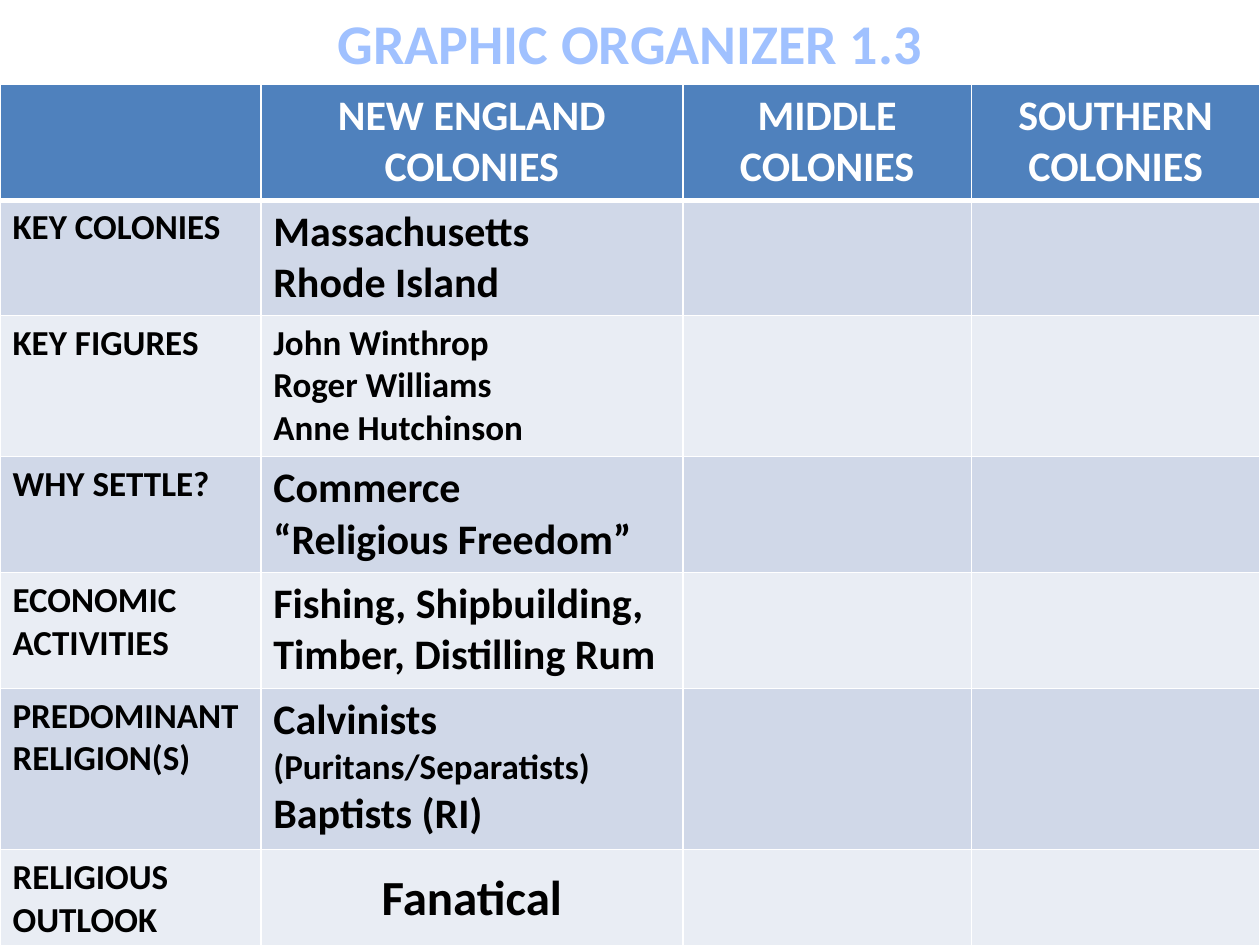
from lxml import etree
from pptx import Presentation
from pptx.dml.color import RGBColor
from pptx.enum.text import MSO_ANCHOR, PP_ALIGN
from pptx.oxml.ns import qn
from pptx.util import Inches, Pt

CENTER, LEFT = PP_ALIGN.CENTER, PP_ALIGN.LEFT
MIDDLE, TOP = MSO_ANCHOR.MIDDLE, MSO_ANCHOR.TOP
TITLE_ONLY = 5
FONT = "Calibri"
WHITE, BLACK, HEADER = "FFFFFF", "000000", "4F81BD"
BANDS = ["D0D8E8", "E9EDF4"]
TITLE_STOPS = [(0, "BFD3F9"), (9, "A0C1FF"), (50, "003D85"),
               (79, "A0C1FF"), (100, "BFD3F9")]

COL_WIDTHS = [2.07, 3.35, 2.29, 2.29]
ROW_HEIGHTS = [0.92, 0.9, 1.11, 0.92, 0.92, 1.28, 0.78]
HEADINGS = ["NEW ENGLAND COLONIES", "MIDDLE COLONIES", "SOUTHERN COLONIES"]
# Row label, then New England paragraphs as (text, size)
TOPICS = [
    ("KEY COLONIES", [("Massachusetts\nRhode Island", 24)]),
    ("KEY FIGURES", [("John Winthrop\nRoger Williams\nAnne Hutchinson", 20)]),
    ("WHY SETTLE?", [("Commerce", 24), ("“Religious Freedom”", 24)]),
    ("ECONOMIC ACTIVITIES",
     [("Fishing, Shipbuilding, Timber, Distilling Rum", 24)]),
    ("PREDOMINANT RELIGION(S)",
     [("Calvinists", 24), ("(Puritans/Separatists)", 20),
      ("Baptists (RI)", 24)]),
    ("RELIGIOUS OUTLOOK", [("Fanatical", 28)]),
]


def rgb(value):
    return RGBColor.from_string(value)


def add_solid(parent, color):
    fill = etree.SubElement(parent, qn("a:solidFill"))
    etree.SubElement(fill, qn("a:srgbClr"), val=color)


def format_font(font, size):
    for name, value in {"name": FONT, "size": Pt(size), "bold": True}.items():
        setattr(font, name, value)


def write(tf, paragraphs, color, align=LEFT):
    for i, (text, size) in enumerate(paragraphs):
        p = tf.paragraphs[0] if i == 0 else tf.add_paragraph()
        p.alignment = align
        for j, line in enumerate(text.split("\n")):
            if j:
                p.add_line_break()
            r = p.add_run()
            r.text = line
            format_font(r.font, size)
            r.font.color.rgb = rgb(color)


def set_borders(cell, bottom):
    tc_pr = cell._tc.get_or_add_tcPr()
    for side, width in zip("LRTB", [1, 1, 1, bottom]):
        ln = etree.SubElement(tc_pr, qn(f"a:ln{side}"), w=str(Pt(width)))
        add_solid(ln, WHITE)


def add_title(s):
    sp = s.shapes.title
    box = {"left": 0, "top": 0, "width": Inches(10), "height": Inches(0.67)}
    for name, value in box.items():
        setattr(sp, name, value)
    tf = sp.text_frame
    tf.vertical_anchor = MIDDLE
    p = tf.paragraphs[0]
    p.alignment = CENTER
    r = p.add_run()
    r.text = "GRAPHIC ORGANIZER 1.3"
    format_font(r.font, 32)

    # Outline and vertical gradient come first in the run properties
    r_pr = r.font._element
    ln = etree.Element(qn("a:ln"), w=str(Pt(0.83)))
    add_solid(ln, "467AB8")
    grad = etree.Element(qn("a:gradFill"))
    stops = etree.SubElement(grad, qn("a:gsLst"))
    for position, color in TITLE_STOPS:
        gs = etree.SubElement(stops, qn("a:gs"), pos=str(position * 1000))
        etree.SubElement(gs, qn("a:srgbClr"), val=color)
    etree.SubElement(grad, qn("a:lin"), ang=str(90 * 60000))
    r_pr.insert(0, ln)
    r_pr.insert(1, grad)


def add_organizer(s):
    table = s.shapes.add_table(
        len(ROW_HEIGHTS), len(COL_WIDTHS), 0, Inches(0.67),
        Inches(10), Inches(6.83)).table
    for column, width in zip(table.columns, COL_WIDTHS):
        column.width = Inches(width)
    for i, (row, height) in enumerate(zip(table.rows, ROW_HEIGHTS)):
        row.height = Inches(height)
        for cell in row.cells:
            set_borders(cell, 1 if i else 3)
            cell.fill.solid()
            cell.fill.fore_color.rgb = rgb(BANDS[(i - 1) % 2] if i else HEADER)

    # Header row
    for col, heading in enumerate(HEADINGS, 1):
        write(table.cell(0, col).text_frame, [(heading, 24)], WHITE, CENTER)

    # Topic rows; the last answer is centred both ways
    for i, (label, answers) in enumerate(TOPICS, 1):
        last = i == len(TOPICS)
        write(table.cell(i, 0).text_frame, [(label, 20)], BLACK)
        cell = table.cell(i, 1)
        cell.vertical_anchor = MIDDLE if last else TOP
        write(cell.text_frame, answers, BLACK, CENTER if last else LEFT)


def main():
    prs = Presentation()
    prs.slide_width, prs.slide_height = Inches(10), Inches(7.5)
    s = prs.slides.add_slide(prs.slide_layouts[TITLE_ONLY])
    add_title(s)
    add_organizer(s)
    prs.save("out.pptx")


if __name__ == "__main__":
    main()
